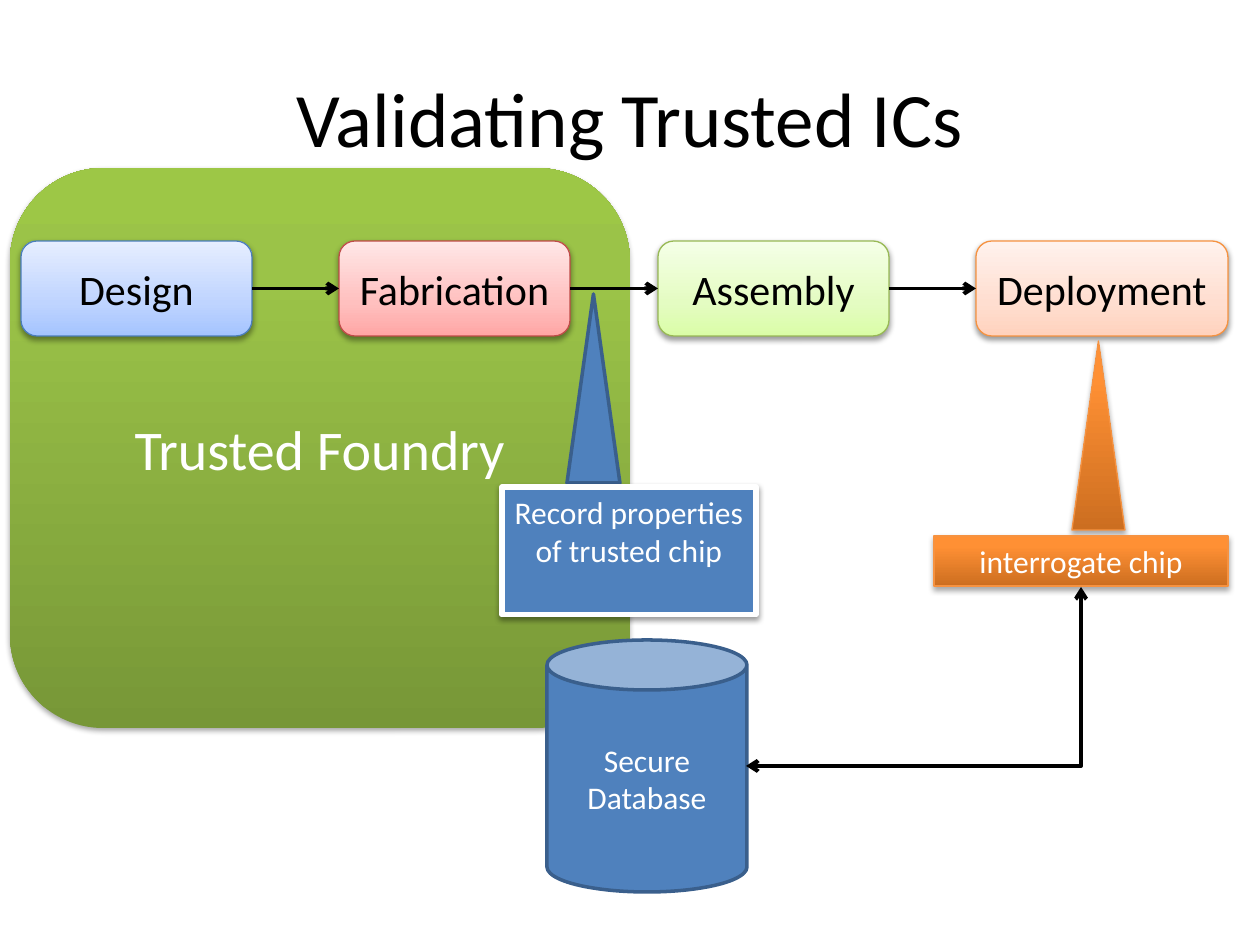
"""Build the slide on validating trusted integrated circuits."""
import lxml.etree
import pptx
import pptx.dml.color
import pptx.enum.shapes
import pptx.enum.text
import pptx.oxml
import pptx.oxml.ns
import pptx.util

Color = pptx.dml.color.RGBColor
Kind = pptx.enum.shapes.MSO_SHAPE
Link = pptx.enum.shapes.MSO_CONNECTOR
Anchor = pptx.enum.text.MSO_ANCHOR
qn = pptx.oxml.ns.qn

SCALE = 914400 / 126
BLACK = Color(0x00, 0x00, 0x00)
WHITE = Color(0xFF, 0xFF, 0xFF)
BLUE = Color(0x4F, 0x81, 0xBD)
NAVY = Color(0x3A, 0x5F, 0x8C)
DESIGN_LINE = Color(0x4B, 0x7E, 0xBC)
FABRICATION_LINE = Color(0xBF, 0x4C, 0x48)
ASSEMBLY_LINE = Color(0x98, 0xB9, 0x55)
ORANGE_LINE = Color(0xF6, 0x92, 0x40)
FOUNDRY = [(0, Color(0x77, 0x97, 0x37)), (80, Color(0x9B, 0xC3, 0x48)), (100, Color(0x9D, 0xC7, 0x46))]
ORANGE = [(0, Color(0xCC, 0x6E, 0x20)), (80, Color(0xFF, 0x90, 0x34)), (100, Color(0xFF, 0x91, 0x36))]
PALE_BLUE = [(0, Color(0xA4, 0xC4, 0xFF)), (35, Color(0xBF, 0xD4, 0xFF)), (100, Color(0xE6, 0xEE, 0xFF))]
PALE_RED = [(0, Color(0xFF, 0xA6, 0xA5)), (35, Color(0xFF, 0xC0, 0xBF)), (100, Color(0xFF, 0xE7, 0xE7))]
PALE_GREEN = [(0, Color(0xDA, 0xFD, 0xA7)), (35, Color(0xE4, 0xFC, 0xC2)), (100, Color(0xF5, 0xFF, 0xE7))]
PALE_ORANGE = [(0, Color(0xFF, 0xD2, 0xBD)), (35, Color(0xFF, 0xDE, 0xD0)), (100, Color(0xFF, 0xF2, 0xED))]


def px(*lengths):
    """Turn pixel lengths into EMU."""
    return [pptx.util.Emu(round(length * SCALE)) for length in lengths]


def write_text(shape, text, size=18, color=WHITE, anchor=Anchor.MIDDLE):
    """Write one centred paragraph into a shape."""
    frame = shape.text_frame
    frame.word_wrap = True
    frame.vertical_anchor = anchor
    para = frame.paragraphs[0]
    para.alignment = pptx.enum.text.PP_ALIGN.CENTER
    span = para.add_run()
    span.text = text
    span.font.name = "Calibri"
    span.font.size = pptx.util.Pt(size)
    span.font.color.rgb = color


deck = pptx.Presentation()
deck.slide_width, deck.slide_height = px(1260, 945)
page = deck.slides.add_slide(deck.slide_layouts[5])
title = page.shapes.title
title.left, title.top, title.width, title.height = px(63, 38, 1134, 157)
write_text(title, "Validating Trusted ICs", size=44, color=BLACK)

blocks = [
    ("foundry", Kind.ROUNDED_RECTANGLE, (10, 168, 620, 560), FOUNDRY, None, 0, 35),
    ("record pointer", Kind.ISOSCELES_TRIANGLE, (567, 294, 53, 189), BLUE, NAVY, 2, 0),
    ("record", Kind.RECTANGLE, (502, 487, 254, 128), BLUE, WHITE, 3, 38),
    ("database", Kind.CAN, (547, 640, 200, 252), BLUE, NAVY, 2, 0),
    ("interrogate pointer", Kind.ISOSCELES_TRIANGLE, (1072, 341, 53, 189), ORANGE, ORANGE_LINE, 0.75, 35),
    ("interrogate", Kind.RECTANGLE, (934, 536, 294, 50), ORANGE, ORANGE_LINE, 0.75, 35),
]
stages = [
    ("Design", 231, PALE_BLUE, DESIGN_LINE),
    ("Fabrication", 231, PALE_RED, FABRICATION_LINE),
    ("Assembly", 231, PALE_GREEN, ASSEMBLY_LINE),
    ("Deployment", 252, PALE_ORANGE, ORANGE_LINE),
]
blocks[1:1] = [
    (name, Kind.ROUNDED_RECTANGLE, (21 + 637 * index // 2, 241, width, 95), fill, line, 0.75, 38)
    for index, (name, width, fill, line) in enumerate(stages)
]

shapes = {}
for name, kind, place, fill, line, weight, shade in blocks:
    shape = page.shapes.add_shape(kind, *px(*place))
    shape.shadow.inherit = False
    shapes[name] = shape
    if isinstance(fill, list):
        shape.fill.gradient()
        shape.fill.gradient_angle = 90
        stops = shape.element.spPr.find(qn("a:gradFill")).find(qn("a:gsLst"))
        for stop in list(stops):
            stops.remove(stop)
        for position, color in fill:
            stop = lxml.etree.SubElement(stops, qn("a:gs"), pos=str(position * 1000))
            lxml.etree.SubElement(stop, qn("a:srgbClr"), val=str(color))
    else:
        shape.fill.solid()
        shape.fill.fore_color.rgb = fill
    if line is None:
        shape.line.fill.background()
    else:
        shape.line.color.rgb = line
        shape.line.width = pptx.util.Pt(weight)
    if shade:
        effects = shape.element.spPr.find(qn("a:effectLst"))
        shadow = lxml.etree.SubElement(
            effects, qn("a:outerShdw"), blurRad="40000", dist="22000", dir="5400000", rotWithShape="0"
        )
        color = lxml.etree.SubElement(shadow, qn("a:srgbClr"), val=str(BLACK))
        lxml.etree.SubElement(color, qn("a:alpha"), val=str(shade * 1000))

title.element.addprevious(shapes["foundry"].element)
write_text(shapes["foundry"], "Trusted Foundry", size=32)
for name, *_ in stages:
    write_text(shapes[name], name, size=24, color=BLACK)
write_text(shapes["record"], "Record properties of trusted chip", anchor=Anchor.TOP)
write_text(shapes["database"], "Secure Database")
write_text(shapes["interrogate"], "interrogate chip", anchor=Anchor.TOP)

arrows = []
for (start, *_), (end, *_) in zip(stages, stages[1:]):
    arrow = page.shapes.add_connector(Link.STRAIGHT, 0, 0, 0, 0)
    arrow.begin_connect(shapes[start], 3)
    arrow.end_connect(shapes[end], 1)
    arrows.append((arrow, ["a:tailEnd"]))

lookup = page.shapes.add_connector(Link.ELBOW, *px(824, 509, 1003, 844))
lookup.element.spPr.find(qn("a:xfrm")).set("rot", "5400000")
lookup.element.spPr.find(qn("a:prstGeom")).set("prst", "bentConnector2")
arrows.append((lookup, ["a:headEnd", "a:tailEnd"]))

for arrow, ends in arrows:
    arrow.line.color.rgb = BLACK
    arrow.line.width = pptx.util.Pt(2.25)
    for end in ends:
        lxml.etree.SubElement(arrow.element.spPr.find(qn("a:ln")), qn(end), type="arrow")
    lxml.etree.SubElement(arrow.element.spPr, qn("a:effectLst"))

deck.save("out.pptx")
